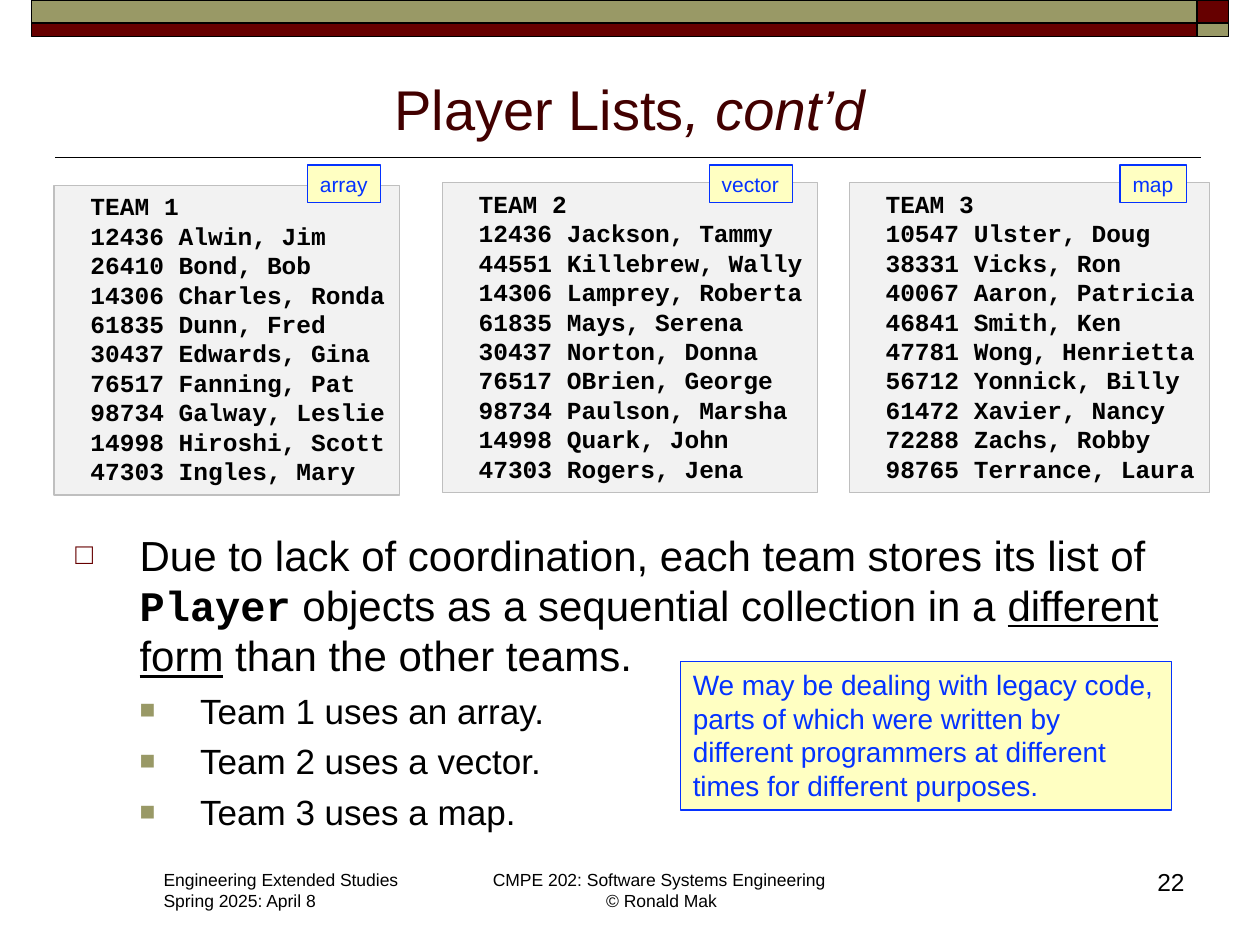
from dataclasses import dataclass
from typing import Optional

import lxml.etree
import pptx
import pptx.dml.color
import pptx.enum.shapes
import pptx.enum.text
import pptx.oxml.ns
import pptx.util

Align = pptx.enum.text.PP_ALIGN
Anchor = pptx.enum.text.MSO_ANCHOR
COLUMNS, ROWS = 100, 75


@dataclass(frozen=True)
class Theme:
    sans: str = "Arial"
    mono: str = "Courier New"
    black: str = "000000"
    title: str = "420000"
    maroon: str = "660000"
    olive: str = "999966"
    panel: str = "F2F2F2"
    panel_line: str = "BFBFBF"
    note: str = "FFFFC2"
    blue: str = "0432FF"
    title_size: int = 32
    body_size: int = 24
    item_size: int = 20
    note_size: int = 16
    code_size: int = 14
    tag_size: int = 12
    footer_size: int = 10


@dataclass(frozen=True)
class Area:
    column: float
    row: float
    columns: float
    rows: float


@dataclass(frozen=True)
class Bullet:
    symbol: str
    color: str
    percent: int
    margin: float
    hanging: float


@dataclass(frozen=True)
class Team:
    panel: Area
    tag_area: Area
    tag: str
    players: tuple[str, ...]


THEME = Theme()
TOPIC = Bullet("□", THEME.maroon, 70, 5.1, 5.1)
ITEM = Bullet("■", THEME.olive, 75, 9.9, 4.8)

BANDS = [
    (Area(95, 0, 2.5, 1.8), THEME.maroon),
    (Area(2.5, 0, 92.5, 1.8), THEME.olive),
    (Area(2.5, 1.8, 92.5, 1.1), THEME.maroon),
    (Area(95, 1.8, 2.5, 1.1), THEME.olive),
]
TEAMS = [
    Team(Area(4.3, 14.7, 27.4, 24.6), Area(24.4, 13.1, 5.8, 3), "array", (
        "12436 Alwin, Jim", "26410 Bond, Bob", "14306 Charles, Ronda",
        "61835 Dunn, Fred", "30437 Edwards, Gina", "76517 Fanning, Pat",
        "98734 Galway, Leslie", "14998 Hiroshi, Scott", "47303 Ingles, Mary")),
    Team(Area(35.1, 14.5, 29.8, 24.6), Area(56.3, 13.1, 6.6, 3), "vector", (
        "12436 Jackson, Tammy", "44551 Killebrew, Wally", "14306 Lamprey, Roberta",
        "61835 Mays, Serena", "30437 Norton, Donna", "76517 OBrien, George",
        "98734 Paulson, Marsha", "14998 Quark, John", "47303 Rogers, Jena")),
    Team(Area(67.4, 14.5, 28.6, 24.6), Area(88.9, 13.1, 5.3, 3), "map", (
        "10547 Ulster, Doug", "38331 Vicks, Ron", "40067 Aaron, Patricia",
        "46841 Smith, Ken", "47781 Wong, Henrietta", "56712 Yonnick, Billy",
        "61472 Xavier, Nancy", "72288 Zachs, Robby", "98765 Terrance, Laura")),
]

deck = pptx.Presentation()
deck.slide_width = pptx.util.Inches(10)
deck.slide_height = pptx.util.Inches(7.5)
page = deck.slides.add_slide(deck.slide_layouts[6])


def across(columns: float) -> int:
    return round(deck.slide_width * columns / COLUMNS)


def down(rows: float) -> int:
    return round(deck.slide_height * rows / ROWS)


def place(area: Area) -> tuple[int, int, int, int]:
    return across(area.column), down(area.row), across(area.columns), down(area.rows)


def rgb(color: str) -> pptx.dml.color.RGBColor:
    return pptx.dml.color.RGBColor.from_string(color)


def paint(shape, fill: str, line: str, width: float) -> None:
    shape.fill.solid()
    shape.fill.fore_color.rgb = rgb(fill)
    shape.line.color.rgb = rgb(line)
    shape.line.width = pptx.util.Pt(width)


def add_band(area: Area, color: str) -> None:
    band = page.shapes.add_shape(pptx.enum.shapes.MSO_SHAPE.RECTANGLE, *place(area))
    band.shadow.inherit = False
    paint(band, color, THEME.black, 1)


def add_rule(start: float, end: float, row: float) -> None:
    rule = page.shapes.add_connector(
        pptx.enum.shapes.MSO_CONNECTOR.STRAIGHT, across(start), down(row), across(end), down(row))
    rule.line.color.rgb = rgb(THEME.black)
    rule.line.width = pptx.util.Pt(1)
    lxml.etree.SubElement(rule.element.spPr, pptx.oxml.ns.qn("a:effectLst"))


def add_box(area: Area, *, wrap: bool = True, anchor=Anchor.TOP,
            fill: Optional[str] = None, line: Optional[str] = None):
    box = page.shapes.add_textbox(*place(area))
    box.text_frame.word_wrap = wrap
    box.text_frame.vertical_anchor = anchor
    if fill and line:
        paint(box, fill, line, 0.75)
    return box.text_frame


def add_para(frame, *, align=Align.LEFT, indent: float = 0,
             bullet: Optional[Bullet] = None, before: float = 0):
    first = frame.paragraphs[0]
    para = frame.add_paragraph() if first.runs else first
    para.alignment = align
    properties = para._p.get_or_add_pPr()
    if indent:
        properties.set("marL", str(across(indent)))
    if before:
        para.space_before = pptx.util.Pt(before)
    if bullet:
        properties.set("marL", str(across(bullet.margin)))
        properties.set("indent", str(-across(bullet.hanging)))
        tint = lxml.etree.SubElement(properties, pptx.oxml.ns.qn("a:buClr"))
        lxml.etree.SubElement(tint, pptx.oxml.ns.qn("a:srgbClr"), val=bullet.color)
        lxml.etree.SubElement(properties, pptx.oxml.ns.qn("a:buSzPct"), val=str(bullet.percent * 1000))
        lxml.etree.SubElement(properties, pptx.oxml.ns.qn("a:buFont"), typeface=THEME.sans)
        lxml.etree.SubElement(properties, pptx.oxml.ns.qn("a:buChar"), char=bullet.symbol)
    return para


def add_text(para, text: str, *, size: int, color: str = THEME.black, name: str = THEME.sans,
             bold: bool = False, italic: bool = False, underline: bool = False) -> None:
    span = para.add_run()
    span.text = text
    font = span.font
    font.size, font.name, font.color.rgb = pptx.util.Pt(size), name, rgb(color)
    font.bold, font.italic, font.underline = bold, italic, underline


def add_lines(frame, lines, *, align=Align.LEFT, indent: float = 0, **style) -> None:
    for line in lines:
        add_text(add_para(frame, align=align, indent=indent), line, **style)


def add_note(area: Area, text: str, size: int, wrap: bool) -> None:
    frame = add_box(area, wrap=wrap, fill=THEME.note, line=THEME.blue)
    add_lines(frame, [text], size=size, color=THEME.blue)


def main() -> None:
    add_rule(95.3, 4.4, 12.5)
    for area, color in BANDS:
        add_band(area, color)

    heading = add_para(add_box(Area(5, 4.5, 90, 7.2), anchor=Anchor.BOTTOM), align=Align.CENTER)
    add_text(heading, "Player Lists", size=THEME.title_size, color=THEME.title)
    add_text(heading, ", cont’d", size=THEME.title_size, color=THEME.title, italic=True)

    body = add_box(Area(5, 41.5, 90, 25.5))
    topic = add_para(body, bullet=TOPIC)
    size = THEME.body_size
    add_text(topic, "Due to lack of coordination, each team stores its list of ", size=size)
    add_text(topic, "Player", size=size, name=THEME.mono, bold=True)
    add_text(topic, " objects as a sequential collection in a ", size=size)
    add_text(topic, "different form", size=size, underline=True)
    add_text(topic, " than the other teams.", size=size)
    for number, team in enumerate(TEAMS, 1):
        item = add_para(body, bullet=ITEM, before=5)
        add_text(item, f"Team {number} uses a{'n' if team.tag == 'array' else ''} {team.tag}.",
                 size=THEME.item_size)

    for number, team in enumerate(TEAMS, 1):
        panel = add_box(team.panel, wrap=False, fill=THEME.panel, line=THEME.panel_line)
        add_lines(panel, (f"TEAM {number}", *team.players), indent=1.9,
                  size=THEME.code_size, name=THEME.mono, bold=True)
        add_note(team.tag_area, team.tag, THEME.tag_size, wrap=False)
    add_note(Area(54, 52.5, 39, 11.8),
             "We may be dealing with legacy code, parts of which were written by different "
             "programmers at different times for different purposes.", THEME.note_size, wrap=True)

    add_lines(add_box(Area(12, 68.5, 20.7, 4.4), wrap=False),
              ("Engineering Extended Studies", "Spring 2025: April 8"), size=THEME.footer_size)
    add_lines(add_box(Area(38, 68.5, 29, 4.4), wrap=False),
              ("CMPE 202: Software Systems Engineering ", "© Ronald Mak"),
              align=Align.CENTER, size=THEME.footer_size)
    add_lines(add_box(Area(87, 68.3, 8, 5)), ["22"], align=Align.RIGHT, size=THEME.code_size)
    deck.save("out.pptx")


if __name__ == "__main__":
    main()
